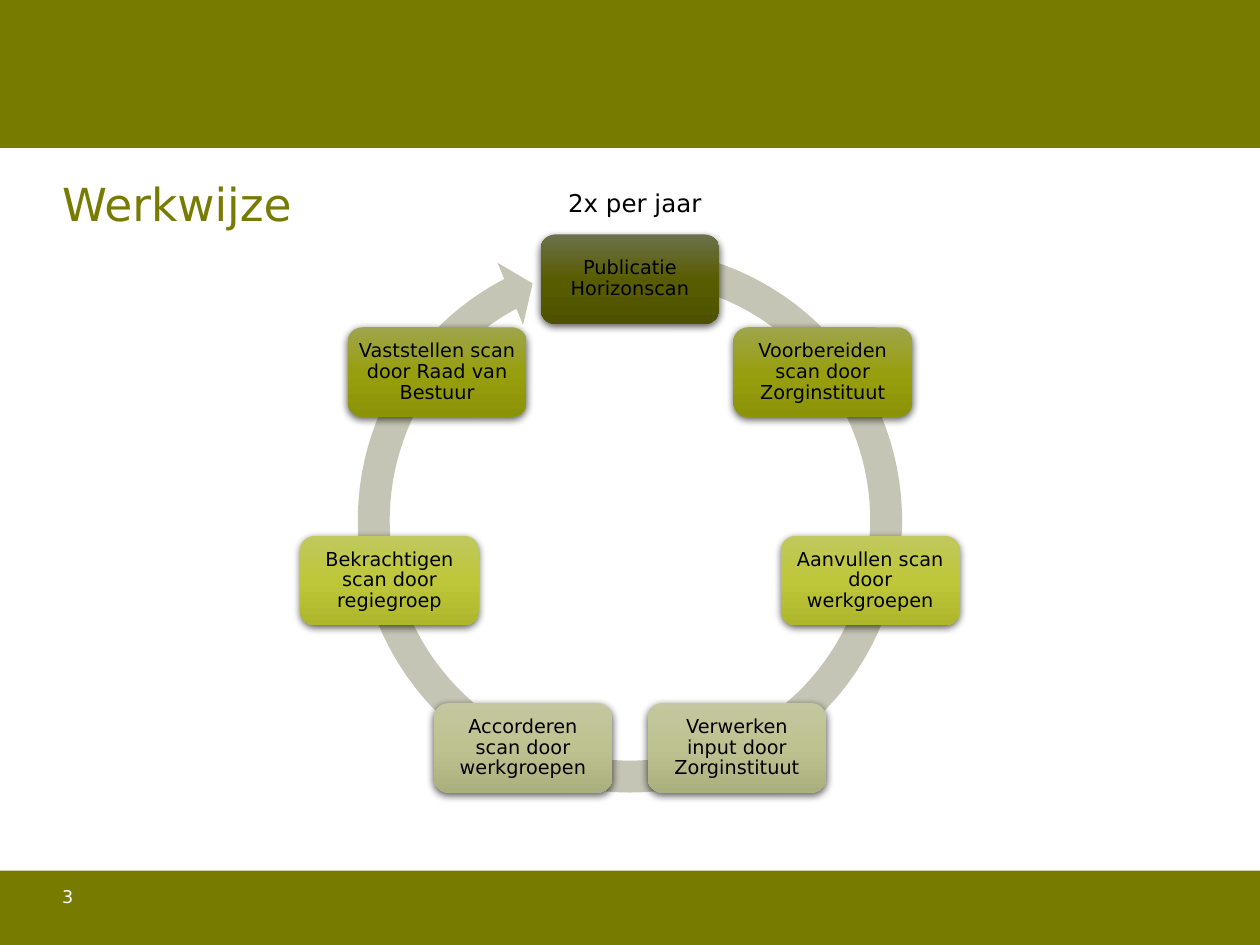
import copy
import math
import pptx
import pptx.dml.color
import pptx.enum.shapes
import pptx.enum.text
import pptx.oxml
import pptx.oxml.ns
import pptx.util

Pt = pptx.util.Pt
RGB = pptx.dml.color.RGBColor
SHAPE = pptx.enum.shapes.MSO_SHAPE
ANCHOR = pptx.enum.text.MSO_ANCHOR
ALIGN = pptx.enum.text.PP_ALIGN

OLIVE = RGB(0x77, 0x7C, 0x00)
RING = RGB(0xC4, 0xC5, 0xB4)
BLACK = RGB(0x00, 0x00, 0x00)
WHITE = RGB(0xFF, 0xFF, 0xFF)
DARK = (RGB(0x6E, 0x71, 0x4B), RGB(0x58, 0x5C, 0x00), RGB(0x4E, 0x52, 0x00))
MOSS = (RGB(0x9F, 0xA5, 0x4C), RGB(0x97, 0x9F, 0x0F), RGB(0x8C, 0x93, 0x07))
LIME = (RGB(0xC0, 0xC8, 0x5E), RGB(0xBE, 0xC7, 0x39), RGB(0xAE, 0xB7, 0x2C))
SAND = (RGB(0xC4, 0xC7, 0x9F), RGB(0xBE, 0xC2, 0x90), RGB(0xAB, 0xAF, 0x7D))

FONT = "DejaVu Sans"
STEPS = (
    ("Publicatie Horizonscan", DARK),
    ("Voorbereiden scan door Zorginstituut", MOSS),
    ("Aanvullen scan door werkgroepen", LIME),
    ("Verwerken input door Zorginstituut", SAND),
    ("Accorderen scan door werkgroepen", SAND),
    ("Bekrachtigen scan door regiegroep", LIME),
    ("Vaststellen scan door Raad van Bestuur", MOSS),
)
SHADOW = (
    '<a:outerShdw %s blurRad="%d" dist="%d" dir="5400000" rotWithShape="0">'
    '<a:srgbClr val="000000"><a:alpha val="63000"/></a:srgbClr></a:outerShdw>'
    % (pptx.oxml.ns.nsdecls("a"), Pt(4.5), Pt(1.5))
)


def set_attributes(target, values):
    for name, value in values.items():
        setattr(target, name, value)


def write(s, text, size, color, inset=0, frame=None, paragraph=None):
    tf = s.text_frame
    margins = ("margin_left", "margin_top", "margin_right", "margin_bottom")
    set_attributes(tf, {"word_wrap": True, **dict.fromkeys(margins, Pt(inset)), **(frame or {})})
    p = tf.paragraphs[0]
    set_attributes(p, paragraph or {})
    r = p.add_run()
    r.text = text
    set_attributes(r.font, {"name": FONT, "size": Pt(size)})
    r.font.color.rgb = color


def add_shape(slide, kind, left, top, width, height, color=None):
    s = slide.shapes.add_shape(kind, Pt(left), Pt(top), Pt(width), Pt(height))
    s.shadow.inherit = False
    s.line.fill.background()
    if color is not None:
        s.fill.solid()
        s.fill.fore_color.rgb = color
    return s


def add_text(slide, left, top, width, height, text, size, color, **options):
    s = slide.shapes.add_textbox(Pt(left), Pt(top), Pt(width), Pt(height))
    write(s, text, size, color, **options)


def fill_gradient(s, colors):
    s.fill.gradient()
    s.fill.gradient_angle = 270
    stops = s.fill._fill._gradFill.gsLst
    stops.insert(1, copy.deepcopy(stops[0]))
    for i, (stop, color) in enumerate(zip(s.fill.gradient_stops, colors)):
        stop.position = i / 2
        stop.color.rgb = color


def add_step(slide, left, top, width, height, text, colors):
    s = add_shape(slide, SHAPE.ROUNDED_RECTANGLE, left, top, width, height)
    fill_gradient(s, colors)
    effects = s._element.spPr.find(pptx.oxml.ns.qn("a:effectLst"))
    effects.append(pptx.oxml.parse_xml(SHADOW))
    write(s, text, 11, BLACK, inset=3.6,
          frame={"vertical_anchor": ANCHOR.MIDDLE},
          paragraph={"alignment": ALIGN.CENTER, "line_spacing": 0.9, "space_after": Pt(3.85)})


def add_cycle(slide, left, top, size):
    arrow = add_shape(slide, SHAPE.CIRCULAR_ARROW, left, top, size, size, RING)
    for i, value in enumerate((0.055, 3.307, 145.298, 169.422, 0.058)):
        arrow.adjustments[i] = value
    width, height, radius = 102.2, 51.1, 140.9
    center_x, center_y = left + size / 2, top + size / 2 + 3
    for i, (text, colors) in enumerate(STEPS):
        angle = 2 * math.pi * i / len(STEPS)
        x = center_x + radius * math.sin(angle) - width / 2
        y = center_y - radius * math.cos(angle) - height / 2
        add_step(slide, x, y, width, height, text, colors)


def add_header(slide, left, top, width, height):
    add_shape(slide, SHAPE.RECTANGLE, left, top, width, height, OLIVE)
    add_text(slide, left + 35.5, top + height + 0.8, 648.5, 62, "Werkwijze", 26, OLIVE,
             frame={"vertical_anchor": ANCHOR.MIDDLE})


def add_footer(slide, left, top, width, height):
    add_shape(slide, SHAPE.RECTANGLE, left, top, width, height, OLIVE)
    add_text(slide, left + 35.5, top + 8.6, 56, 29, "3", 10, WHITE)


def add_frequency(slide, left, top, width, height):
    add_text(slide, left, top, width, height, "2x per jaar", 14, BLACK,
             frame={"word_wrap": False, "margin_left": Pt(7.2), "margin_right": Pt(7.2),
                    "margin_top": Pt(3.6), "margin_bottom": Pt(3.6)})


def main():
    prs = pptx.Presentation()
    set_attributes(prs, {"slide_width": Pt(720), "slide_height": Pt(540)})
    slide = prs.slides.add_slide(prs.slide_layouts[6])
    add_header(slide, 0, 0, 720, 84.5)
    add_footer(slide, 0, 497.5, 720, 42.5)
    add_cycle(slide, 194.4, 131.8, 331.2)
    add_frequency(slide, 317.5, 103.7, 92.9, 24.5)
    prs.save("out.pptx")


if __name__ == "__main__":
    main()
